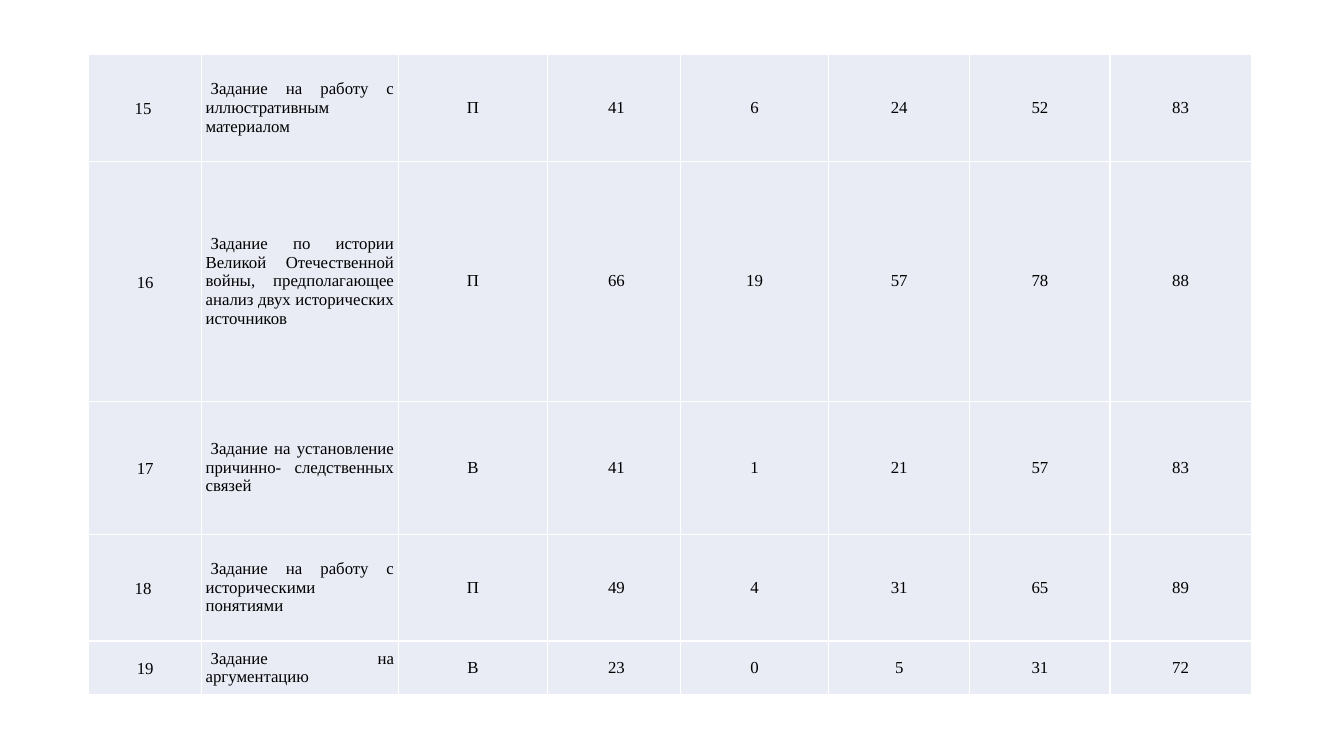
import pptx
import pptx.util
import pptx.dml.color
import pptx.enum.text
import pptx.oxml.ns
import lxml.etree

Inches, Pt = pptx.util.Inches, pptx.util.Pt
Align = pptx.enum.text.PP_ALIGN

theme = {
    "font": "Times New Roman",
    "size": Pt(12),
    "text": pptx.dml.color.RGBColor.from_string("000000"),
    "cell": pptx.dml.color.RGBColor.from_string("E9EBF5"),
    "border": "FFFFFF",
    "border_width": Pt(1),
}

# Grid: table corner, column widths and row heights in inches
left, top = 0.88, 0.54
column_widths = [1.12, 1.95, 1.48, 1.32, 1.47, 1.4, 1.39, 1.4]
row_heights = [1.06, 2.38, 1.32, 1.06, 0.53]

# Task number, description, level, then result percentages
tasks = [
    ("15 ", "Задание на работу с иллюстративным материалом", "П", 41, 6, 24, 52, 83),
    ("16", "Задание по истории Великой Отечественной войны, предполагающее анализ двух исторических источников",
     "П", 66, 19, 57, 78, 88),
    ("17", "Задание на установление причинно- следственных связей", "В", 41, 1, 21, 57, 83),
    ("18 ", "Задание на работу с историческими понятиями", "П", 49, 4, 31, 65, 89),
    ("19", "Задание на аргументацию", "В", 23, 0, 5, 31, 72),
]

# Paragraph formats and first-line indents that depend on the column
column_formats = {
    0: {"alignment": Align.CENTER, "line_spacing": 1.15, "space_after": Pt(10)},
    1: {"alignment": Align.JUSTIFY},
}
default_format = {"alignment": Align.CENTER}
column_indents = {1: 0.05, 2: -0.08, 3: 0.05}

cell_format = {
    "margin_left": Inches(0.04),
    "margin_right": Inches(0.04),
    "margin_top": 0,
    "margin_bottom": 0,
    "vertical_anchor": pptx.enum.text.MSO_ANCHOR.MIDDLE,
}
font_format = {"name": theme["font"], "size": theme["size"]}


def set_attributes(target, values):
    for name, value in values.items():
        setattr(target, name, value)


def add_borders(cell):
    properties = cell._tc.get_or_add_tcPr()
    qualified = pptx.oxml.ns.qn
    for side in ("a:lnL", "a:lnR", "a:lnT", "a:lnB"):
        line = lxml.etree.SubElement(properties, qualified(side), w=str(theme["border_width"]))
        fill = lxml.etree.SubElement(line, qualified("a:solidFill"))
        lxml.etree.SubElement(fill, qualified("a:srgbClr"), val=theme["border"])


# Presentation with one blank slide
presentation = pptx.Presentation()
set_attributes(presentation, {"slide_width": Inches(13.33), "slide_height": Inches(7.5)})
slide = presentation.slides.add_slide(presentation.slide_layouts[6])

# Table
table = slide.shapes.add_table(
    len(row_heights), len(column_widths), Inches(left), Inches(top),
    Inches(sum(column_widths)), Inches(sum(row_heights))).table
set_attributes(table, {"first_row": False, "horz_banding": False})
for column, width in zip(table.columns, column_widths):
    column.width = Inches(width)
for row, height in zip(table.rows, row_heights):
    row.height = Inches(height)

# Cells
for row, task in zip(table.rows, tasks):
    for index, (cell, value) in enumerate(zip(row.cells, task)):
        set_attributes(cell, cell_format)
        add_borders(cell)
        cell.fill.solid()
        cell.fill.fore_color.rgb = theme["cell"]

        paragraph = cell.text_frame.paragraphs[0]
        set_attributes(paragraph, column_formats.get(index, default_format))
        if index in column_indents:
            indent = Inches(column_indents[index])
            paragraph._p.get_or_add_pPr().set("indent", str(indent))

        run = paragraph.add_run()
        run.text = str(value)
        set_attributes(run.font, font_format)
        run.font.color.rgb = theme["text"]

presentation.save("out.pptx")
